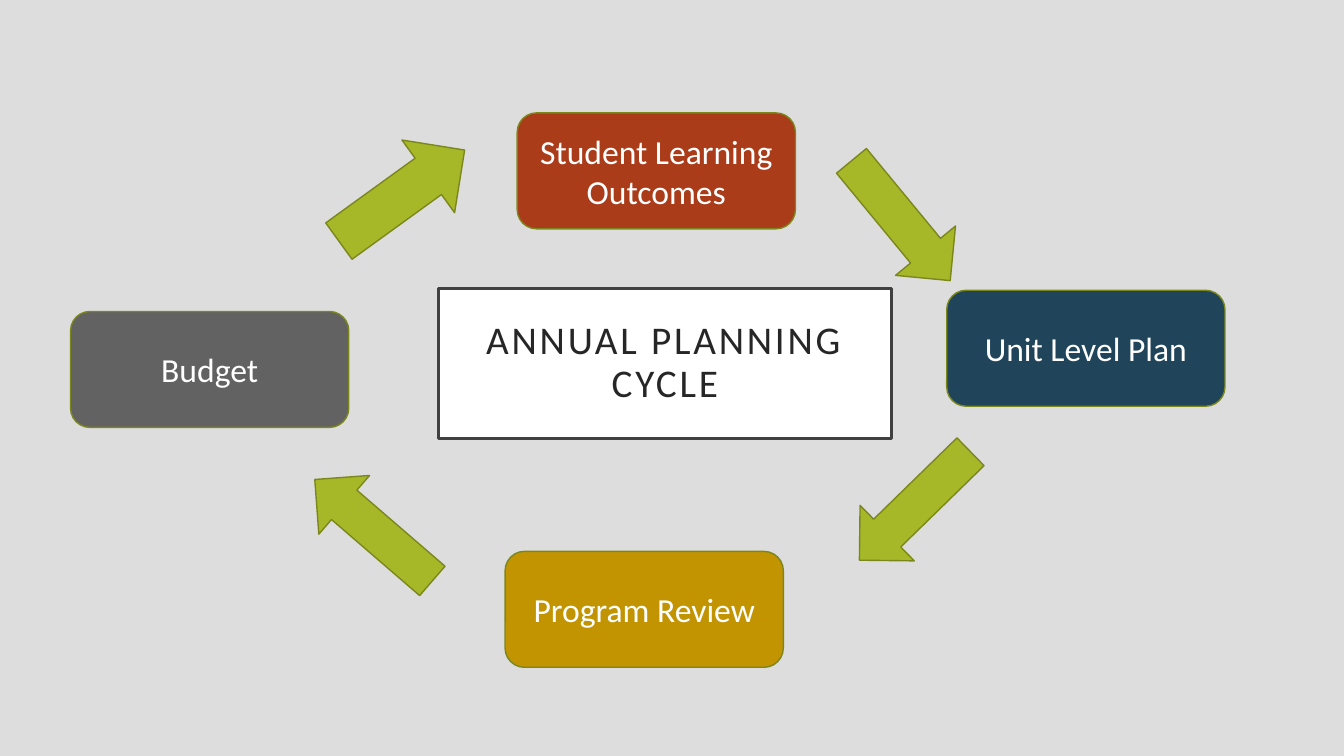
"""Build the annual planning cycle slide."""
from dataclasses import dataclass

from pptx import Presentation
from pptx.dml.color import RGBColor
from pptx.enum.shapes import MSO_SHAPE
from pptx.enum.text import MSO_ANCHOR, MSO_AUTO_SIZE, PP_ALIGN
from pptx.shapes.autoshape import Shape
from pptx.slide import Slide
from pptx.util import Inches, Pt

ROUNDED = MSO_SHAPE.ROUNDED_RECTANGLE
DOWN_ARROW = MSO_SHAPE.DOWN_ARROW
MIDDLE = MSO_ANCHOR.MIDDLE
CENTER = PP_ALIGN.CENTER
NO_AUTOFIT = MSO_AUTO_SIZE.NONE
TITLE_ONLY = 5
STAGE_WIDTH, STAGE_HEIGHT = 2.76, 1.15
ARROW_LENGTH = 1.54


@dataclass(frozen=True)
class Theme:
    font: str = "Calibri"
    background: str = "DDDDDD"
    title_fill: str = "FFFFFF"
    title_line: str = "404040"
    title_text: str = "262626"
    stage_text: str = "FFFFFF"
    arrow_fill: str = "A6B727"
    outline: str = "7B871D"
    title_size: float = 28
    stage_size: float = 24
    title_line_width: float = 2.5
    outline_width: float = 1
    title_tracking: float = 2


@dataclass(frozen=True)
class Stage:
    label: str
    left: float
    top: float
    fill: str


@dataclass(frozen=True)
class CycleArrow:
    left: float
    top: float
    rotation: float
    width: float = 0.77


THEME = Theme()

STAGES = (
    Stage("Unit Level Plan", 9.39, 2.88, "20455A"),
    Stage("Student Learning Outcomes", 5.13, 1.12, "AB3C19"),
    Stage("Budget", 0.7, 3.09, "626262"),
    Stage("Program Review", 5.01, 5.47, "C29401"),
)

ARROWS = (
    CycleArrow(8.55, 1.42, 320.5),
    CycleArrow(3.54, 1.17, 234.1, width=0.89),
    CycleArrow(3.32, 4.49, 130.8),
    CycleArrow(8.69, 4.25, 45.7),
)


def paint(shape: Shape, fill: str, line: str, line_width: float) -> None:
    shape.shadow.inherit = False
    shape.fill.solid()
    shape.fill.fore_color.rgb = RGBColor.from_string(fill)
    shape.line.color.rgb = RGBColor.from_string(line)
    shape.line.width = Pt(line_width)


def write(shape: Shape, text: str, size: float, color: str,
          line_spacing: float = 1.0, tracking: float = 0) -> None:
    frame = shape.text_frame
    frame.word_wrap = True
    frame.auto_size = NO_AUTOFIT
    frame.vertical_anchor = MIDDLE
    paragraph = frame.paragraphs[0]
    paragraph.alignment = CENTER
    paragraph.line_spacing = line_spacing
    run = paragraph.add_run()
    run.text = text
    run.font.name = THEME.font
    run.font.size = Pt(size)
    run.font.color.rgb = RGBColor.from_string(color)
    if tracking:
        run.font._element.set("spc", str(round(tracking * 100)))


def draw_title(slide: Slide, text: str) -> None:
    title = slide.shapes.title
    title.left, title.top = Inches(4.35), Inches(2.86)
    title.width, title.height = Inches(4.49), Inches(1.49)
    paint(title, THEME.title_fill, THEME.title_line, THEME.title_line_width)
    frame = title.text_frame
    frame.margin_left = frame.margin_right = Inches(0.2)
    frame.margin_top = frame.margin_bottom = Inches(0.2)
    write(title, text, THEME.title_size, THEME.title_text,
          line_spacing=0.9, tracking=THEME.title_tracking)


def draw_stage(slide: Slide, stage: Stage) -> None:
    box = slide.shapes.add_shape(
        ROUNDED, Inches(stage.left), Inches(stage.top),
        Inches(STAGE_WIDTH), Inches(STAGE_HEIGHT))
    paint(box, stage.fill, THEME.outline, THEME.outline_width)
    write(box, stage.label, THEME.stage_size, THEME.stage_text)


def draw_arrow(slide: Slide, arrow: CycleArrow) -> None:
    pointer = slide.shapes.add_shape(
        DOWN_ARROW, Inches(arrow.left), Inches(arrow.top),
        Inches(arrow.width), Inches(ARROW_LENGTH))
    pointer.rotation = arrow.rotation
    paint(pointer, THEME.arrow_fill, THEME.outline, THEME.outline_width)


def main() -> None:
    deck = Presentation()
    deck.slide_width, deck.slide_height = Inches(13.33), Inches(7.5)
    slide = deck.slides.add_slide(deck.slide_layouts[TITLE_ONLY])
    slide.background.fill.solid()
    slide.background.fill.fore_color.rgb = RGBColor.from_string(THEME.background)
    draw_title(slide, "ANNUAL PLANNING CYCLE")
    for stage in STAGES:
        draw_stage(slide, stage)
    for arrow in ARROWS:
        draw_arrow(slide, arrow)
    deck.save("out.pptx")


if __name__ == "__main__":
    main()
